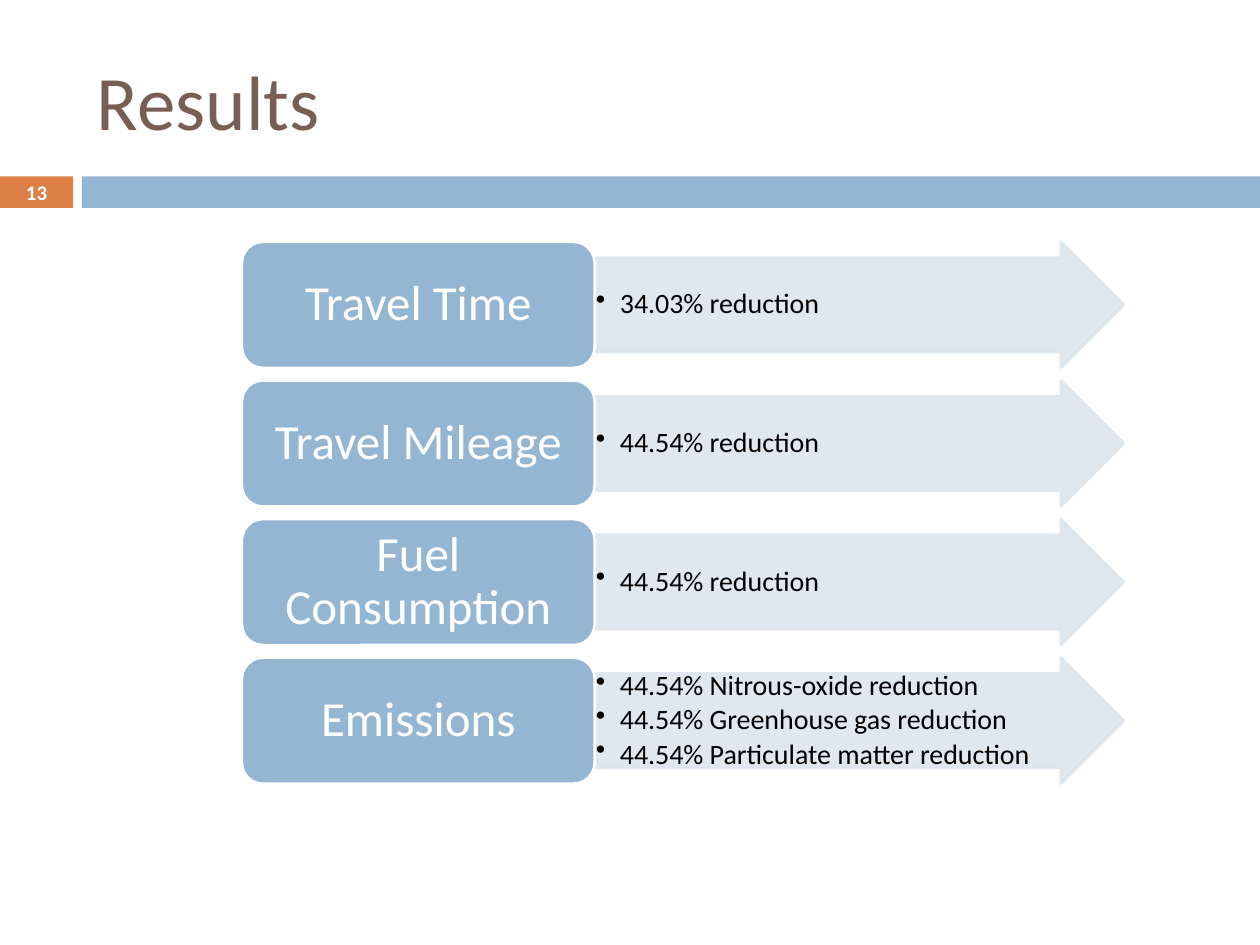
from dataclasses import dataclass

from lxml.etree import SubElement
from pptx import Presentation
from pptx.dml.color import RGBColor
from pptx.enum.shapes import MSO_SHAPE
from pptx.enum.text import MSO_ANCHOR, PP_ALIGN
from pptx.oxml.ns import qn
from pptx.util import Inches, Pt


@dataclass(frozen=True)
class Theme:
    font: str = "Calibri"
    brown: str = "775F55"
    orange: str = "DD8047"
    blue: str = "94B6D2"
    pale: str = "DCE5EE"
    white: str = "FFFFFF"
    black: str = "000000"
    title: float = 44
    label: float = 28
    body: float = 16
    page: float = 11.9


class Deck:
    """Draws on a grid of 100 columns by 75 rows."""

    def __init__(self, theme):
        self.theme = theme
        self.file = Presentation()
        self.file.slide_width, self.file.slide_height = Inches(10), Inches(7.5)
        self.col = self.file.slide_width / 100
        self.row = self.file.slide_height / 75
        self.slide = self.file.slides.add_slide(self.file.slide_layouts[6])

    def place(self, x, y, w, h):
        return [int(n) for n in (x * self.col, y * self.row, w * self.col, h * self.row)]

    def shape(self, kind, spot, fill, line=None, alpha=None):
        item = self.slide.shapes.add_shape(kind, *self.place(*spot))
        item.shadow.inherit = False
        item.fill.solid()
        item.fill.fore_color.rgb = RGBColor.from_string(fill)
        if line:
            item.line.color.rgb = RGBColor.from_string(line)
            item.line.width = Pt(1.5)
        else:
            item.line.fill.background()
        if alpha:
            for tint in item._element.spPr.iter(qn("a:srgbClr")):
                SubElement(tint, qn("a:alpha"), val=str(alpha * 1000))
        return item

    def box(self, spot):
        return self.slide.shapes.add_textbox(*self.place(*spot))

    def text(self, item, lines, size, color, align=PP_ALIGN.LEFT, inset=(0.1, 0.05),
             bold=False, space=1, bullet=False):
        frame = item.text_frame
        frame.word_wrap = True
        frame.vertical_anchor = MSO_ANCHOR.MIDDLE
        frame.margin_left = frame.margin_right = Inches(inset[0])
        frame.margin_top = frame.margin_bottom = Inches(inset[1])
        for i, line in enumerate(lines):
            para = frame.add_paragraph() if i else frame.paragraphs[0]
            para.alignment, para.line_spacing = align, space
            if bullet:
                self.bullet(para, size)
            run = para.add_run()
            run.text = line
            run.font.name, run.font.size, run.font.bold = self.theme.font, Pt(size), bold
            run.font.color.rgb = RGBColor.from_string(color)

    def bullet(self, para, size):
        para.space_after = Pt(size * 0.15)
        props = para._p.get_or_add_pPr()
        props.set("marL", str(Inches(0.19)))
        props.set("indent", str(-Inches(0.19)))
        SubElement(props, qn("a:buChar"), char="•")

    def label(self, spot, words):
        item = self.shape(MSO_SHAPE.ROUNDED_RECTANGLE, spot, self.theme.blue, self.theme.white)
        self.text(item, [words], self.theme.label, self.theme.white, PP_ALIGN.CENTER,
                  (0.12, 0.06), space=0.9)

    def arrow(self, spot, lines):
        item = self.shape(MSO_SHAPE.RIGHT_ARROW, spot, self.theme.pale, self.theme.pale, 90)
        item.adjustments[0], item.adjustments[1] = 0.75, 0.5
        self.text(item, lines, self.theme.body, self.theme.black, inset=(0.01, 0.01),
                  space=0.9, bullet=True)


RESULTS = [
    ("Travel Time", ["34.03% reduction"]),
    ("Travel Mileage", ["44.54% reduction"]),
    ("Fuel Consumption", ["44.54% reduction"]),
    ("Emissions", ["44.54% Nitrous-oxide reduction",
                   "44.54% Greenhouse gas reduction",
                   "44.54% Particulate matter reduction"]),
]


def main():
    theme = Theme()
    deck = Deck(theme)

    # Header band with page number
    page = deck.shape(MSO_SHAPE.RECTANGLE, (0, 14, 5.8, 2.5), theme.orange)
    deck.text(page, ["13"], theme.page, theme.white, PP_ALIGN.CENTER, (0, 0), bold=True)
    deck.shape(MSO_SHAPE.RECTANGLE, (6.5, 14, 93.5, 2.5), theme.blue)

    # Title
    deck.text(deck.box((6.7, 2.5, 89.2, 10.8)), ["Results"], theme.title, theme.brown)

    # One arrow and label per result
    left, top, wide, high, step = 19.2, 19.2, 28, 10, 11
    for i, (name, lines) in enumerate(RESULTS):
        y = top + i * step
        deck.arrow((left + wide, y, wide * 1.5, high), lines)
        deck.label((left, y, wide, high), name)

    deck.file.save("out.pptx")


if __name__ == "__main__":
    main()
